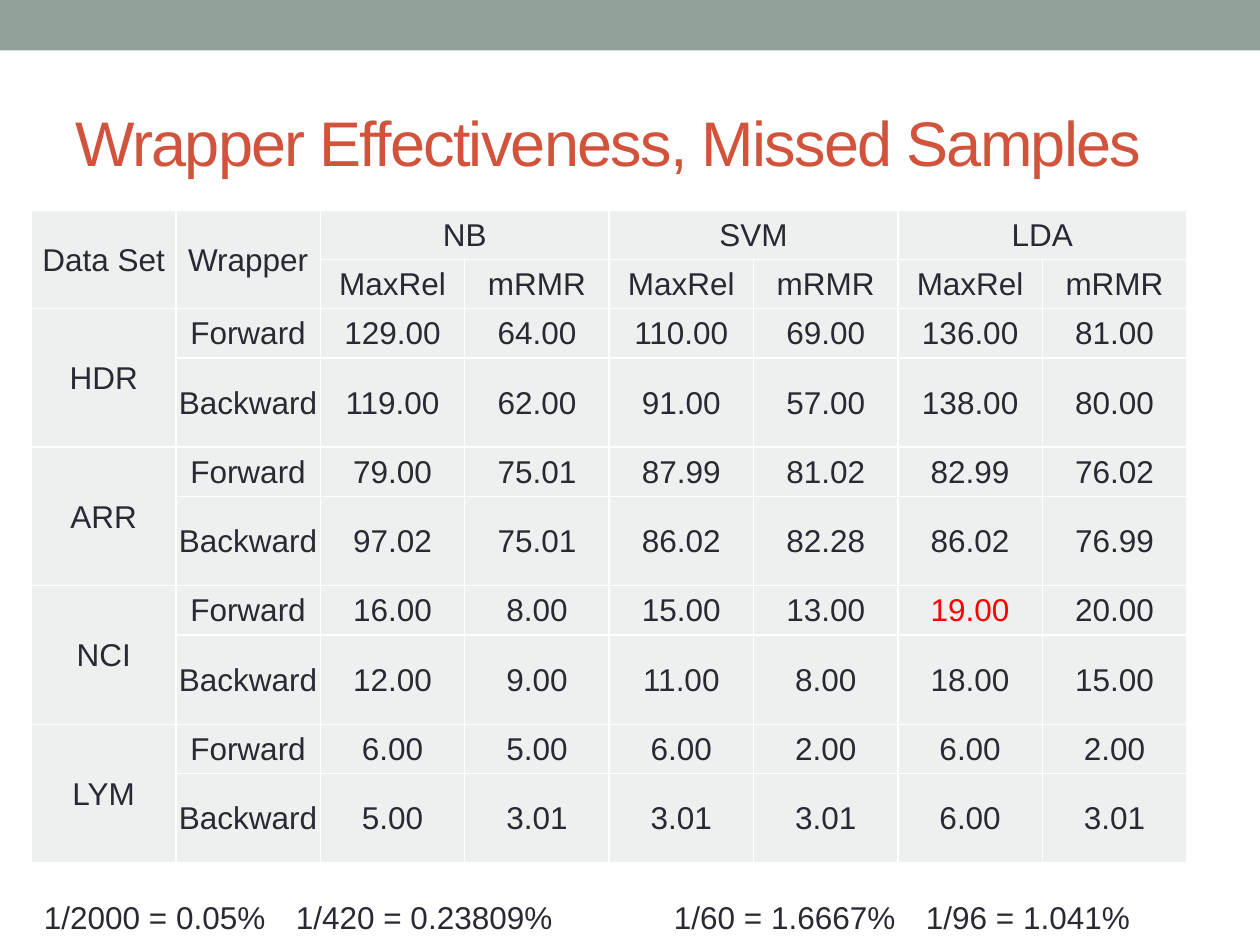
from dataclasses import dataclass

from lxml.etree import SubElement
from pptx import Presentation
from pptx.dml.color import RGBColor
from pptx.enum.shapes import MSO_SHAPE
from pptx.enum.text import MSO_ANCHOR, PP_ALIGN
from pptx.oxml.ns import qn
from pptx.slide import Slide
from pptx.table import Table, _Cell as Cell
from pptx.text.text import _Paragraph as Paragraph
from pptx.util import Inches, Pt

SAGE = RGBColor(0x93, 0xA2, 0x99)
BRICK = RGBColor(0xD2, 0x53, 0x3C)
INK = RGBColor(0x29, 0x29, 0x34)
RED = RGBColor(0xFF, 0x00, 0x00)
CELL_GRAY = RGBColor(0xEE, 0xF0, 0xEF)
WHITE = RGBColor(0xFF, 0xFF, 0xFF)

CLASSIFIERS = ("NB", "SVM", "LDA")
RANKINGS = ("MaxRel", "mRMR")
TABLE_WIDTH = 9.17
COLUMN_COUNT = 2 + len(CLASSIFIERS) * len(RANKINGS)
SHORT_ROW = 0.39
TALL_ROW = 0.71
RATES = ("1/2000 = 0.05%", "1/420 = 0.23809%", "1/60 = 1.6667%", "1/96 = 1.041%")
RATE_TABS = (2, 5, 7)


@dataclass(frozen=True)
class DataSet:
    name: str
    forward: tuple[float, ...]
    backward: tuple[float, ...]


DATA_SETS = (
    DataSet("HDR", (129, 64, 110, 69, 136, 81), (119, 62, 91, 57, 138, 80)),
    DataSet("ARR", (79, 75.01, 87.99, 81.02, 82.99, 76.02), (97.02, 75.01, 86.02, 82.28, 86.02, 76.99)),
    DataSet("NCI", (16, 8, 15, 13, 19, 20), (12, 9, 11, 8, 18, 15)),
    DataSet("LYM", (6, 5, 6, 2, 6, 2), (5, 3.01, 3.01, 3.01, 6, 3.01)),
)
HIGHLIGHT = ("NCI", "Forward", 4)


def set_font(paragraph: Paragraph, size: int, color: RGBColor) -> None:
    paragraph.font.name = "Arial"
    paragraph.font.size = Pt(size)
    paragraph.font.color.rgb = color


def add_bar(slide: Slide) -> None:
    bar = slide.shapes.add_shape(MSO_SHAPE.RECTANGLE, 0, 0, Inches(10), Inches(0.4))
    bar.shadow.inherit = False
    bar.fill.solid()
    bar.fill.fore_color.rgb = SAGE
    bar.line.fill.background()


def fill_title(slide: Slide) -> None:
    title = slide.shapes.title
    title.left, title.top = Inches(0.5), Inches(0.58)
    title.width, title.height = Inches(9), Inches(1.08)
    frame = title.text_frame
    frame.vertical_anchor = MSO_ANCHOR.MIDDLE
    paragraph = frame.paragraphs[0]
    run = paragraph.add_run()
    run.text = "Wrapper Effectiveness, Missed Samples"
    run.font.size = Pt(36)
    run._r.get_or_add_rPr().set("spc", "-100")
    paragraph.alignment = PP_ALIGN.LEFT
    set_font(paragraph, 36, BRICK)


def style_cell(cell: Cell) -> None:
    properties = cell._tc.get_or_add_tcPr()
    for side in ("lnL", "lnR", "lnT", "lnB"):
        border = SubElement(properties, qn(f"a:{side}"), w=str(Pt(1)))
        fill = SubElement(border, qn("a:solidFill"))
        SubElement(fill, qn("a:srgbClr"), val=str(WHITE))
    cell.fill.solid()
    cell.fill.fore_color.rgb = CELL_GRAY
    cell.margin_left = cell.margin_right = cell.margin_top = Inches(0.01)
    cell.margin_bottom = 0
    cell.vertical_anchor = MSO_ANCHOR.MIDDLE


def write_cell(
    table: Table, row: int, column: int, text: str,
    rows: int = 1, columns: int = 1, color: RGBColor = INK,
) -> None:
    cell = table.cell(row, column)
    if rows > 1 or columns > 1:
        cell.merge(table.cell(row + rows - 1, column + columns - 1))
    paragraph = cell.text_frame.paragraphs[0]
    paragraph.text = text
    paragraph.alignment = PP_ALIGN.CENTER
    set_font(paragraph, 18, color)


def add_results_table(slide: Slide) -> None:
    heights = [SHORT_ROW] * 2 + [SHORT_ROW, TALL_ROW] * len(DATA_SETS)
    table = slide.shapes.add_table(
        len(heights), COLUMN_COUNT, Inches(0.25), Inches(1.67), Inches(TABLE_WIDTH), Inches(sum(heights))
    ).table
    for column in table.columns:
        column.width = Inches(TABLE_WIDTH / COLUMN_COUNT)
    for row, height in zip(table.rows, heights):
        row.height = Inches(height)
    for cell in table.iter_cells():
        style_cell(cell)

    write_cell(table, 0, 0, "Data Set", rows=2)
    write_cell(table, 0, 1, "Wrapper", rows=2)
    for group, classifier in enumerate(CLASSIFIERS):
        first = 2 + group * len(RANKINGS)
        write_cell(table, 0, first, classifier, columns=len(RANKINGS))
        for offset, ranking in enumerate(RANKINGS):
            write_cell(table, 1, first + offset, ranking)

    for index, data_set in enumerate(DATA_SETS):
        top = 2 + index * 2
        write_cell(table, top, 0, data_set.name, rows=2)
        wrappers = (("Forward", data_set.forward), ("Backward", data_set.backward))
        for row, (wrapper, values) in enumerate(wrappers, top):
            write_cell(table, row, 1, wrapper)
            for position, value in enumerate(values):
                color = RED if (data_set.name, wrapper, position) == HIGHLIGHT else INK
                write_cell(table, row, 2 + position, f"{value:.2f}", color=color)


def add_rates(slide: Slide) -> None:
    box = slide.shapes.add_textbox(Inches(0.25), Inches(7.08), Inches(9.25), Inches(0.4))
    box.text_frame.word_wrap = True
    paragraph = box.text_frame.paragraphs[0]
    paragraph.text = "\t".join(RATES)
    tabs = SubElement(paragraph._p.get_or_add_pPr(), qn("a:tabLst"))
    for position in RATE_TABS:
        SubElement(tabs, qn("a:tab"), pos=str(Inches(position)), algn="l")
    set_font(paragraph, 18, INK)


def main() -> None:
    presentation = Presentation()
    presentation.slide_width = Inches(10)
    presentation.slide_height = Inches(7.5)
    slide = presentation.slides.add_slide(presentation.slide_layouts[5])
    add_bar(slide)
    fill_title(slide)
    add_results_table(slide)
    add_rates(slide)
    presentation.save("out.pptx")


if __name__ == "__main__":
    main()
